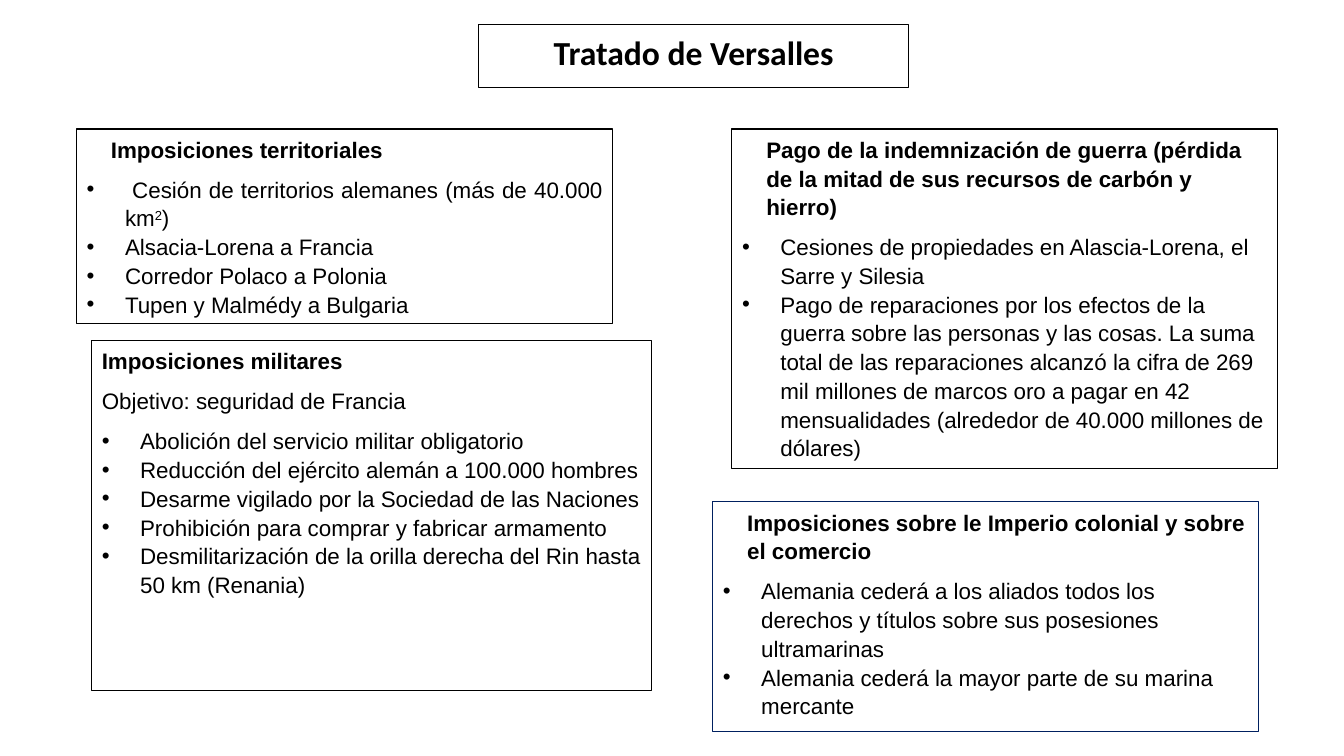
import pptx
import pptx.dml.color
import pptx.enum.text
import pptx.oxml.ns
import pptx.util
from lxml import etree

Inches = pptx.util.Inches
Pt = pptx.util.Pt
ALIGN = pptx.enum.text.PP_ALIGN
COLORS = {"ink": "000000", "paper": "FFFFFF", "navy": "002060"}
LINE_SPACING = 1.07


def rgb(name):
    return pptx.dml.color.RGBColor.from_string(COLORS[name])


def write_paragraph(paragraph, text, font, align, left=0, bullet=False):
    """Fill one paragraph; text between ^ marks is set as superscript."""
    layout = {"alignment": align, "line_spacing": LINE_SPACING,
              "space_before": Pt(0), "space_after": Pt(0 if bullet else 8)}
    for name, value in layout.items():
        setattr(paragraph, name, value)
    properties = paragraph._p.get_or_add_pPr()
    properties.set("marL", str(Inches(left)))
    properties.set("indent", str(Inches(-left if bullet else 0)))
    qn = pptx.oxml.ns.qn
    if bullet:
        etree.SubElement(properties, qn("a:buFont"), typeface="Arial")
        etree.SubElement(properties, qn("a:buChar"), char="•")
    else:
        etree.SubElement(properties, qn("a:buNone"))
    for position, part in enumerate(text.split("^")):
        run = paragraph.add_run()
        run.text = part
        for name, value in font.items():
            setattr(run.font, name, value)
        run.font.color.rgb = rgb("ink")
        if position % 2:
            run._r.get_or_add_rPr().set("baseline", "30000")


# Each box: place, outline, then paragraphs as (text, kind, alignment)
J, L = ALIGN.JUSTIFY, ALIGN.LEFT
territorial = ((0.76, 1.28, 5.32, 1.93), "ink", [
    ("Imposiciones territoriales", "indented heading", J),
    (" Cesión de territorios alemanes (más de 40.000 km^2^)", "bullet", J),
    ("Alsacia-Lorena a Francia", "bullet", J),
    ("Corredor Polaco a Polonia", "bullet", J),
    ("Tupen y Malmédy a Bulgaria", "bullet", J),
])
military = ((0.91, 3.38, 5.55, 3.47), "ink", [
    ("Imposiciones militares", "heading", J),
    ("Objetivo: seguridad de Francia", "plain", J),
    ("Abolición del servicio militar obligatorio", "bullet", L),
    ("Reducción del ejército alemán a 100.000 hombres", "bullet", L),
    ("Desarme vigilado por la Sociedad de las Naciones", "bullet", L),
    ("Prohibición para comprar y fabricar armamento", "bullet", L),
    ("Desmilitarización de la orilla derecha del Rin hasta 50 km (Renania)",
     "bullet", L),
])
colonial = ((7.07, 4.98, 5.41, 2.28), "navy", [
    ("Imposiciones sobre le Imperio colonial y sobre el comercio",
     "indented heading", L),
    ("Alemania cederá a los aliados todos los derechos y títulos sobre sus "
     "posesiones ultramarinas", "bullet", L),
    ("Alemania cederá la mayor parte de su marina mercante", "bullet", L),
])
reparations = ((7.26, 1.28, 5.41, 3.37), "ink", [
    ("Pago de la indemnización de guerra (pérdida de la mitad de sus recursos "
     "de carbón y hierro)", "indented heading", L),
    ("Cesiones de propiedades en Alascia-Lorena, el Sarre y Silesia",
     "bullet", L),
    ("Pago de reparaciones por los efectos de la guerra sobre las personas y "
     "las cosas. La suma total de las reparaciones alcanzó la cifra de 269 mil "
     "millones de marcos oro a pagar en 42 mensualidades (alrededor de 40.000 "
     "millones de dólares)", "bullet", L),
])
treaty = ((4.75, 0.24, 4.26, 0.63), "ink",
          [("Tratado de Versalles", "title", ALIGN.CENTER)])

INDENTS = {"indented heading": 0.24, "bullet": 0.38}
BODY_FONT = {"name": "Arial", "size": Pt(16), "bold": False}
HEADING_FONT = {**BODY_FONT, "bold": True}
FONTS = {"heading": HEADING_FONT, "indented heading": HEADING_FONT,
         "title": {"name": "Calibri", "size": Pt(24), "bold": True}}
FRAME_FORMAT = {"word_wrap": True,
                "auto_size": pptx.enum.text.MSO_AUTO_SIZE.NONE,
                "vertical_anchor": pptx.enum.text.MSO_ANCHOR.TOP}

presentation = pptx.Presentation()
presentation.slide_width = Inches(13.33)
presentation.slide_height = Inches(7.5)

# The comparison layout has a title and four bodies, numbered 0 to 4
slide = presentation.slides.add_slide(presentation.slide_layouts[4])
boxes = [treaty, territorial, military, colonial, reparations]
for index, (place, outline, paragraphs) in enumerate(boxes):
    box = slide.placeholders[index]
    for side, length in zip(("left", "top", "width", "height"), place):
        setattr(box, side, Inches(length))
    box.fill.solid()
    box.fill.fore_color.rgb = rgb("paper")
    box.line.color.rgb = rgb(outline)
    box.line.width = Pt(0.75)
    frame = box.text_frame
    for name, value in FRAME_FORMAT.items():
        setattr(frame, name, value)
    for number, (text, kind, align) in enumerate(paragraphs):
        paragraph = frame.add_paragraph() if number else frame.paragraphs[0]
        write_paragraph(paragraph, text, FONTS.get(kind, BODY_FONT), align,
                        INDENTS.get(kind, 0), kind == "bullet")

presentation.save("out.pptx")
